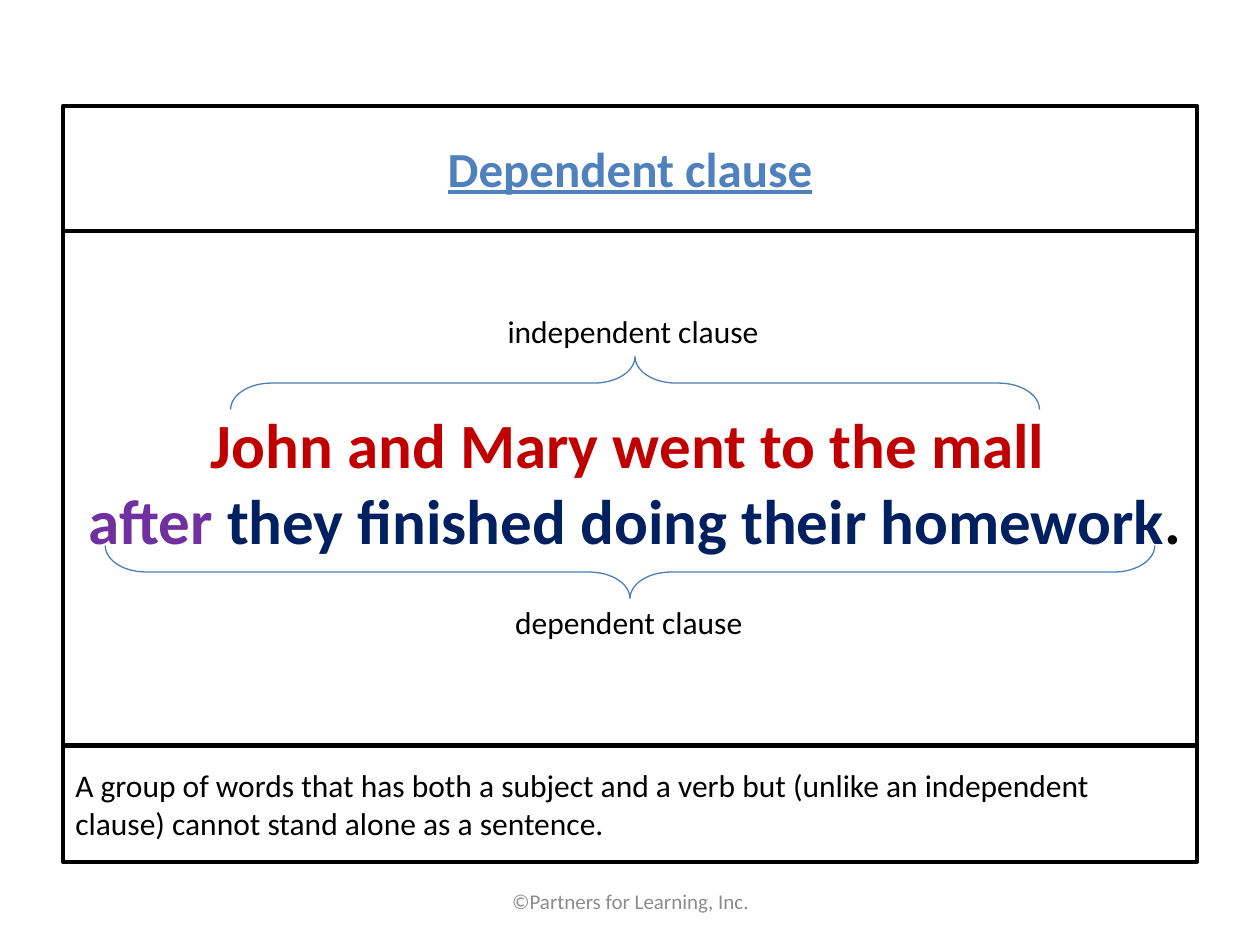
from pptx import Presentation
from pptx.dml.color import RGBColor
from pptx.enum.shapes import MSO_SHAPE
from pptx.enum.text import MSO_ANCHOR, PP_ALIGN
from pptx.util import Inches, Pt

COLORS = {
    "black": "000000",
    "title": "4F81BD",
    "brace": "4B7EBC",
    "independent": "C00000",
    "conjunction": "7030A0",
    "dependent": "002060",
    "footer": "8C8C8C",
}
FORMATS = {
    "title": {"size": Pt(28), "bold": True, "underline": True},
    "body": {"size": Pt(18)},
    "example": {"size": Pt(36), "bold": True},
    "footer": {"size": Pt(12)},
}


class SlideBuilder:
    font_name = "Calibri"

    def __init__(self, slide):
        self.slide = slide

    def add_outline(self, kind, box, color, width):
        shape = self.slide.shapes.add_shape(kind, *map(Inches, box))
        shape.shadow.inherit = False
        shape.fill.background()
        shape.line.color.rgb = RGBColor.from_string(COLORS[color])
        shape.line.width = Pt(width)
        return shape

    def add_panel(self, top, height):
        self.add_outline(MSO_SHAPE.RECTANGLE, (0.5, top, 9, height), "black", 2.25)

    def add_brace(self, center_x, center_y, span, rotation):
        """Add a brace lying on its side; span is its length across the slide."""
        depth = 0.42
        box = (center_x - depth / 2, center_y - span / 2, depth, span)
        brace = self.add_outline(MSO_SHAPE.RIGHT_BRACE, box, "brace", 0.75)
        brace.rotation = rotation
        brace.adjustments[0] = 0.774
        brace.adjustments[1] = 0.5

    def add_text(self, box, lines, style, align=PP_ALIGN.CENTER,
                 anchor=MSO_ANCHOR.MIDDLE, wrap=True):
        """Add a text box; each line is a list of (text, color name) runs."""
        frame = self.slide.shapes.add_textbox(*map(Inches, box)).text_frame
        frame.word_wrap = wrap
        frame.vertical_anchor = anchor
        for index, runs in enumerate(lines):
            paragraph = frame.add_paragraph() if index else frame.paragraphs[0]
            paragraph.alignment = align
            for text, color in runs:
                run = paragraph.add_run()
                run.text = text
                run.font.name = self.font_name
                run.font.color.rgb = RGBColor.from_string(COLORS[color])
                for name, value in FORMATS[style].items():
                    setattr(run.font, name, value)

    def add_label(self, left, top, width, text):
        self.add_text((left, top, width, 0.4), [[(text, "black")]], "body",
                      PP_ALIGN.LEFT, MSO_ANCHOR.TOP, wrap=False)


def main():
    presentation = Presentation()
    presentation.slide_width = Inches(10)
    presentation.slide_height = Inches(7.5)
    builder = SlideBuilder(presentation.slides.add_slide(presentation.slide_layouts[6]))

    for top, height in ((0.84, 0.99), (1.83, 4.08), (5.92, 0.92)):
        builder.add_panel(top, height)

    builder.add_text((3.42, 6.95, 3.17, 0.4),
                     [[("©Partners for Learning, Inc.", "footer")]], "footer")
    builder.add_text((0.5, 0.83, 9, 1), [[("Dependent clause", "title")]], "title")
    definition = ("A group of words that has both a subject and a verb but (unlike an "
                  "independent clause) cannot stand alone as a sentence.")
    builder.add_text((0.5, 5.92, 9, 0.92), [[(definition, "black")]], "body",
                     PP_ALIGN.LEFT)

    example = [
        [("John and Mary went to the mall ", "independent")],
        [("after ", "conjunction"),
         ("they finished doing their homework", "dependent"),
         (".", "black")],
    ]
    builder.add_text((0.5, 3.17, 9.08, 1.31), example, "example",
                     anchor=MSO_ANCHOR.TOP)

    builder.add_brace(5.04, 3.04, 6.42, 270)
    builder.add_brace(5, 4.54, 8.33, 90)
    builder.add_label(3.93, 2.43, 2.23, "independent clause")
    builder.add_label(3.99, 4.74, 2.03, "dependent clause")

    presentation.save("out.pptx")


if __name__ == "__main__":
    main()
